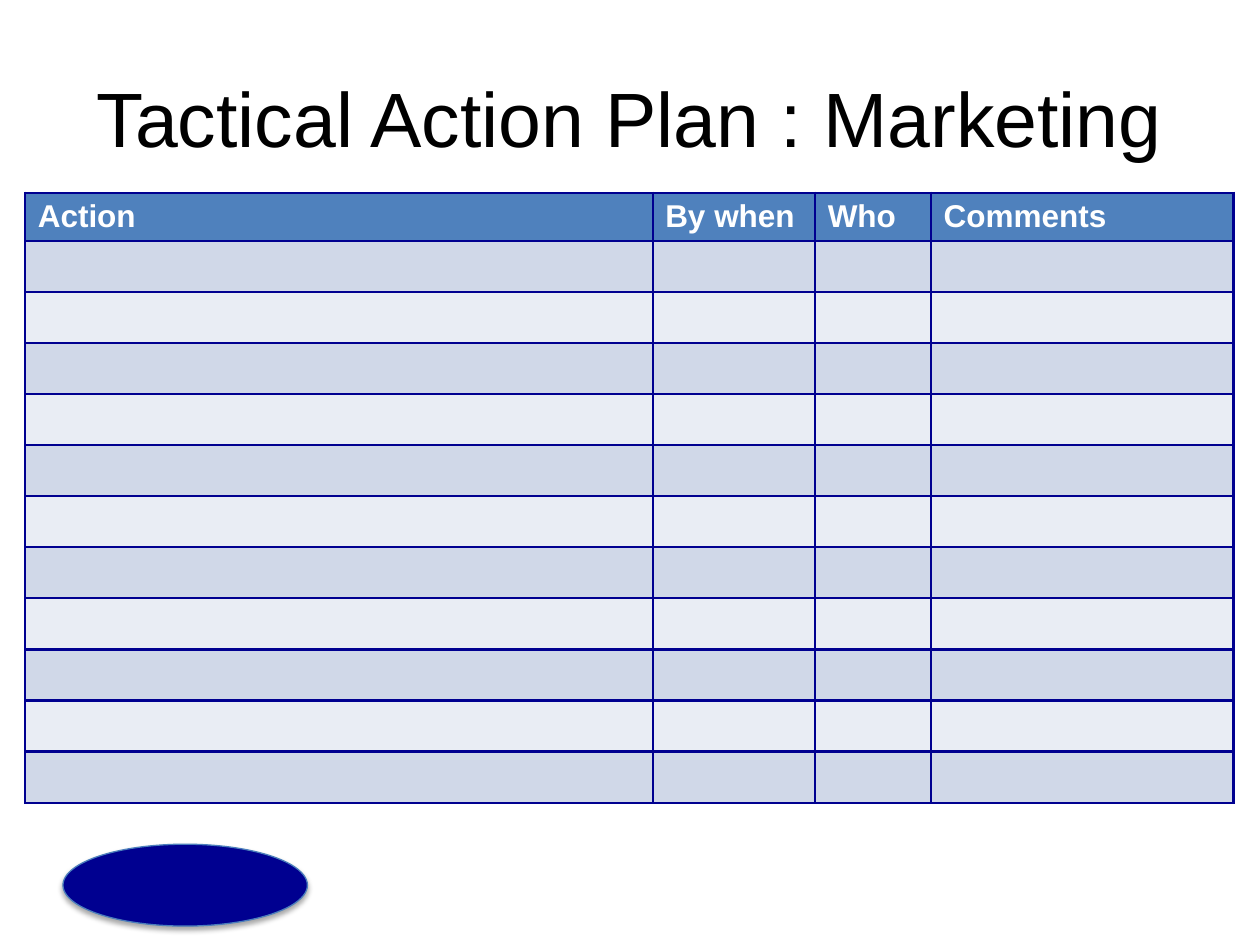
from pptx import Presentation
from pptx.dml.color import RGBColor
from pptx.enum.shapes import MSO_SHAPE as Shape
from pptx.enum.text import MSO_ANCHOR as Anchor, PP_ALIGN as Align
from pptx.oxml import parse_xml
from pptx.oxml.ns import nsdecls
from pptx.util import Inches, Pt


def tint(code):
    return RGBColor.from_string(code)


def style(font, look):
    for key, val in look.items():
        setattr(font, key, val)


NAVY = "000090"
deck = Presentation()
deck.slide_width, deck.slide_height = Inches(10), Inches(7.5)
slide = deck.slides.add_slide(deck.slide_layouts[5])

# Title
title = slide.shapes.title
box = {"left": 0.5, "top": 0.3, "width": 9, "height": 1.25}
for key, val in box.items():
    setattr(title, key, Inches(val))
frame = title.text_frame
frame.text = "Tactical Action Plan : Marketing"
frame.vertical_anchor = Anchor.MIDDLE
para = frame.paragraphs[0]
para.alignment = Align.CENTER
style(para.runs[0].font, {"name": "Arial", "size": Pt(44)})
para.runs[0].font.color.rgb = tint("000000")

# Oval with soft shadow
oval = slide.shapes.add_shape(
    Shape.OVAL, Inches(0.5), Inches(6.7), Inches(1.94), Inches(0.65))
oval.fill.solid()
oval.fill.fore_color.rgb = tint(NAVY)
oval.line.color.rgb = tint("4B7EBC")
oval.line.width = Pt(0.75)
oval.shadow.inherit = False
oval.element.spPr[-1].append(parse_xml(
    f'<a:outerShdw {nsdecls("a")} blurRad="{Pt(3.1)}" dist="{Pt(1.8)}" '
    'dir="5400000" rotWithShape="0"><a:srgbClr val="000000">'
    '<a:alpha val="35000"/></a:srgbClr></a:outerShdw>'))

# Action table
heads = ["Action", "By when", "Who", "Comments"]
widths = [4.98, 1.29, 0.92, 2.4]
count, high = 12, 0.37
table = slide.shapes.add_table(
    count, len(heads), Inches(0.2), Inches(1.53),
    Inches(sum(widths)), Inches(count * high)).table
for col, wide in zip(table.columns, widths):
    col.width = Inches(wide)

for num, row in enumerate(table.rows):
    row.height = Inches(high)
    back = "4F81BD" if num == 0 else ("E9EDF4", "D0D8E8")[num % 2]
    for cell in row.cells:
        # Borders come before the fill in the cell's XML
        props = cell._tc.get_or_add_tcPr()
        for side in "LRTB":
            props.append(parse_xml(
                f'<a:ln{side} {nsdecls("a")} w="{Pt(1.5)}"><a:solidFill>'
                f'<a:srgbClr val="{NAVY}"/></a:solidFill></a:ln{side}>'))
        cell.fill.solid()
        cell.fill.fore_color.rgb = tint(back)

# Header labels
for cell, head in zip(table.rows[0].cells, heads):
    cell.text = head
    font = cell.text_frame.paragraphs[0].runs[0].font
    style(font, {"name": "Arial", "size": Pt(18), "bold": True})
    font.color.rgb = tint("FFFFFF")

deck.save("out.pptx")
